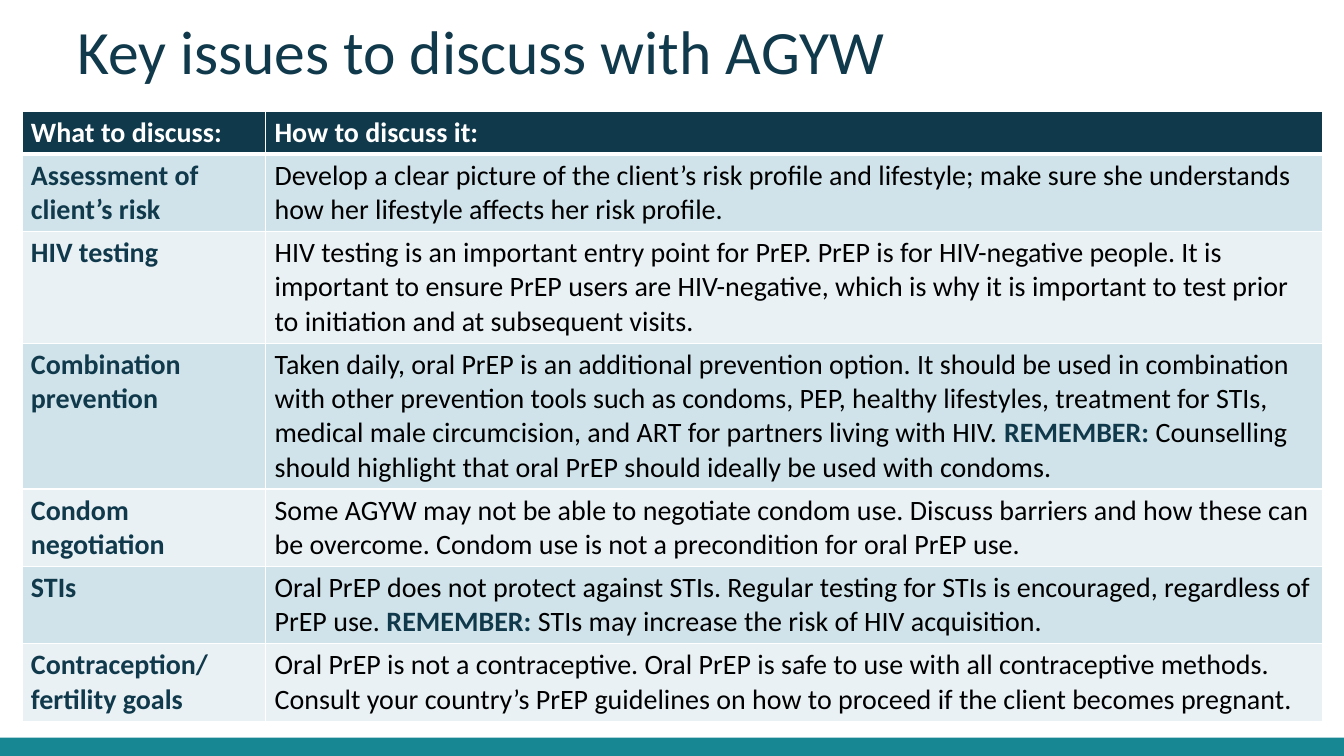
from dataclasses import dataclass

from lxml.etree import SubElement
from pptx import Presentation
from pptx.dml.color import RGBColor
from pptx.enum.shapes import MSO_SHAPE
from pptx.enum.text import MSO_ANCHOR
from pptx.oxml.ns import qn
from pptx.slide import Slide
from pptx.table import _Cell
from pptx.util import Cm, Pt


@dataclass(frozen=True)
class Theme:
    font: str = "Calibri"
    title: int = 44
    body: int = 20
    navy: str = "10394B"
    teal: str = "178793"
    dark: str = "D0E3EA"
    light: str = "E9F1F5"
    white: str = "FFFFFF"
    black: str = "000000"


@dataclass(frozen=True)
class Issue:
    topic: str
    advice: str
    lines: int


THEME = Theme()
ALERT = "REMEMBER: "
LINE = 0.86
PAD_X, PAD_Y = 0.22, 0.11
HEAD = Issue("What to discuss:", "How to discuss it:", 1)
ISSUES = [
    Issue("Assessment of client’s risk",
          "Develop a clear picture of the client’s risk profile and lifestyle; "
          "make sure she understands how her lifestyle affects her risk profile.", 2),
    Issue("HIV testing",
          "HIV testing is an important entry point for PrEP. PrEP is for HIV-negative people. "
          "It is important to ensure PrEP users are HIV-negative, which is why it is important "
          "to test prior to initiation and at subsequent visits.", 3),
    Issue("Combination prevention",
          "Taken daily, oral PrEP is an additional prevention option. It should be used in "
          "combination with other prevention tools such as condoms, PEP, healthy lifestyles, "
          "treatment for STIs, medical male circumcision, and ART for partners living with HIV. "
          "REMEMBER: Counselling should highlight that oral PrEP should ideally be used "
          "with condoms.", 4),
    Issue("Condom negotiation",
          "Some AGYW may not be able to negotiate condom use. Discuss barriers and how these "
          "can be overcome. Condom use is not a precondition for oral PrEP use.", 2),
    Issue("STIs",
          "Oral PrEP does not protect against STIs. Regular testing for STIs is encouraged, "
          "regardless of PrEP use. REMEMBER: STIs may increase the risk of HIV acquisition.", 2),
    Issue("Contraception/ fertility goals",
          "Oral PrEP is not a contraceptive. Oral PrEP is safe to use with all contraceptive "
          "methods. Consult your country’s PrEP guidelines on how to proceed if the client "
          "becomes pregnant.", 2),
]


def rgb(code: str) -> RGBColor:
    return RGBColor.from_string(code)


def add_bar(slide: Slide) -> None:
    bar = slide.shapes.add_shape(MSO_SHAPE.RECTANGLE, 0, Cm(18.59), Cm(33.87), Cm(0.46))
    bar.shadow.inherit = False
    bar.fill.solid()
    bar.fill.fore_color.rgb = rgb(THEME.teal)
    bar.line.fill.background()


def add_title(slide: Slide, text: str) -> None:
    frame = slide.shapes.add_textbox(Cm(1.7), Cm(0.5), Cm(30.48), Cm(1.8)).text_frame
    frame.word_wrap = True
    frame.vertical_anchor = MSO_ANCHOR.MIDDLE
    para = frame.paragraphs[0]
    para.text = text
    para.line_spacing = Pt(44.8)
    para.font.name = THEME.font
    para.font.size = Pt(THEME.title)
    para.font.color.rgb = rgb(THEME.navy)


def set_edges(cell: _Cell, top: int, bottom: int) -> None:
    """Draw white cell borders; top and bottom widths are in points."""
    props = cell._tc.get_or_add_tcPr()
    for side, width in (("L", 1), ("R", 1), ("T", top), ("B", bottom)):
        edge = SubElement(props, qn(f"a:ln{side}"), w=str(Pt(width)))
        fill = SubElement(edge, qn("a:solidFill"))
        SubElement(fill, qn("a:srgbClr"), val=THEME.white)


def fill_cell(cell: _Cell, text: str, ink: str, bold: bool, back: str) -> None:
    """Write the text, with any alert word in bold navy."""
    cell.fill.solid()
    cell.fill.fore_color.rgb = rgb(back)
    cell.margin_left = cell.margin_right = Cm(PAD_X)
    cell.margin_top = cell.margin_bottom = Cm(PAD_Y)
    para = cell.text_frame.paragraphs[0]
    para.font.name = THEME.font
    para.font.size = Pt(THEME.body)
    before, alert, after = text.partition(ALERT)
    for part in filter(None, (before, alert, after)):
        run = para.add_run()
        run.text = part
        run.font.bold = bold or part == ALERT
        run.font.color.rgb = rgb(THEME.navy if part == ALERT else ink)


def add_grid(slide: Slide) -> None:
    rows = [HEAD, *ISSUES]
    highs = [Cm(row.lines * LINE + 2 * PAD_Y) for row in rows]
    wides = [Cm(6.14), Cm(26.62)]
    grid = slide.shapes.add_table(len(rows), 2, Cm(0.56), Cm(2.8),
                                  sum(wides), sum(highs)).table
    grid.horz_banding = False
    for col, wide in zip(grid.columns, wides):
        col.width = wide
    for i, (row, high) in enumerate(zip(rows, highs)):
        grid.rows[i].height = high
        if i == 0:
            back, inks = THEME.navy, (THEME.white, THEME.white)
        else:
            back = THEME.dark if i % 2 else THEME.light
            inks = (THEME.navy, THEME.black)
        for j, (text, ink) in enumerate(zip((row.topic, row.advice), inks)):
            cell = grid.cell(i, j)
            set_edges(cell, top=3 if i == 1 else 1, bottom=3 if i == 0 else 1)
            fill_cell(cell, text, ink, i == 0 or j == 0, back)


def main() -> None:
    deck = Presentation()
    deck.slide_width, deck.slide_height = Cm(33.87), Cm(19.05)
    slide = deck.slides.add_slide(deck.slide_layouts[6])
    add_bar(slide)
    add_grid(slide)
    add_title(slide, "Key issues to discuss with AGYW")
    deck.save("out.pptx")


if __name__ == "__main__":
    main()
